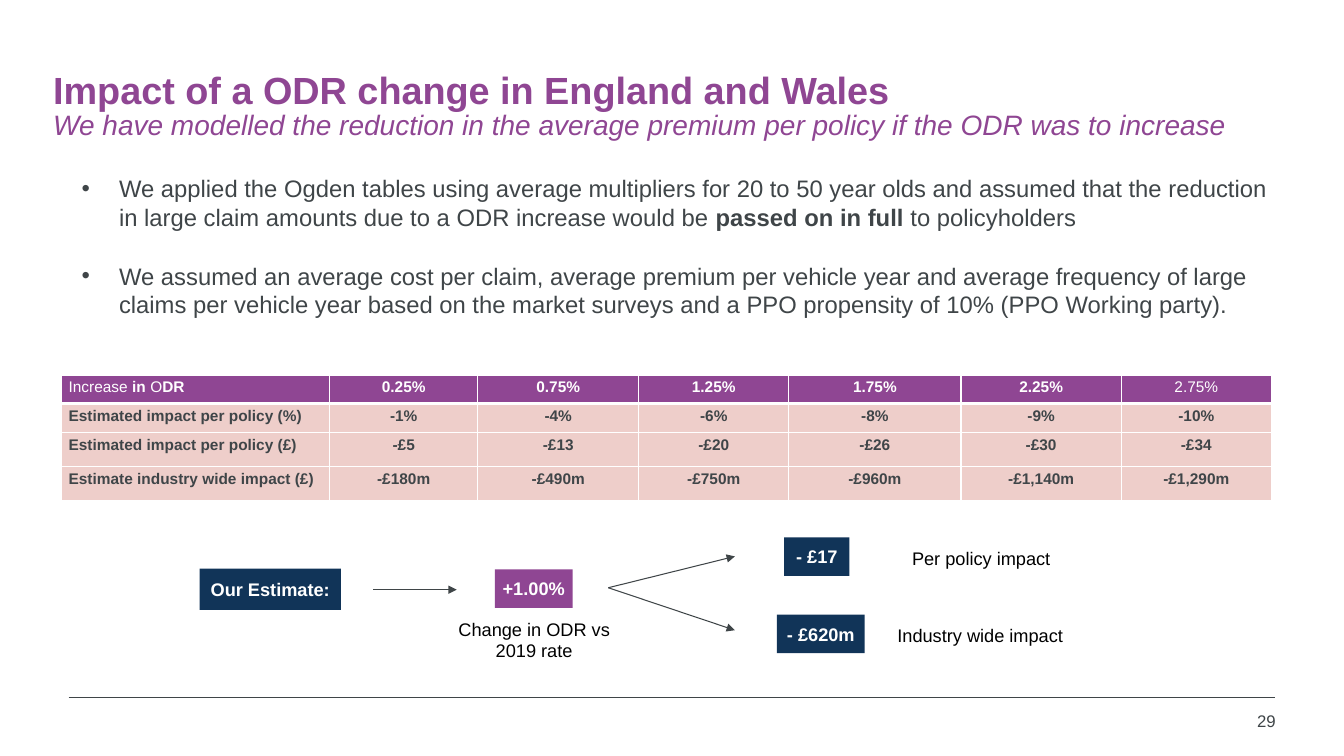
"""Build the slide on the impact of an ODR change in England and Wales."""
from lxml.etree import SubElement
from pptx import Presentation
from pptx.dml.color import RGBColor
from pptx.enum.shapes import MSO_CONNECTOR, MSO_SHAPE
from pptx.enum.text import MSO_ANCHOR, PP_ALIGN
from pptx.oxml import parse_xml
from pptx.oxml.ns import nsdecls, qn
from pptx.util import Cm, Pt

COLORS = {"purple": "8F4693", "navy": "113458", "ink": "3F4548",
          "pink": "EECECA", "white": "FFFFFF", "black": "000000"}


def add_runs(paragraph, runs, size, color, align=PP_ALIGN.LEFT):
    """Add (text, bold, italic) runs to a paragraph."""
    paragraph.alignment = align
    for text, bold, italic in runs:
        run = paragraph.add_run()
        run.text = text
        run.font.name = "Arial"
        run.font.size = Pt(size)
        run.font.bold = bold
        run.font.italic = italic
        run.font.color.rgb = RGBColor.from_string(COLORS[color])


def add_frame(left, top, width, height, inset_x=0, inset_y=0, anchor=MSO_ANCHOR.TOP):
    """Add a wrapping text box and return its text frame."""
    frame = slide.shapes.add_textbox(Cm(left), Cm(top), Cm(width), Cm(height)).text_frame
    frame.word_wrap = True
    frame.margin_left = frame.margin_right = Cm(inset_x)
    frame.margin_top = frame.margin_bottom = Cm(inset_y)
    frame.vertical_anchor = anchor
    return frame


deck = Presentation()
deck.slide_width, deck.slide_height = Cm(33.87), Cm(19.05)
slide = deck.slides.add_slide(deck.slide_layouts[6])

heading = add_frame(1.09, 1.12, 31.75, 3.17, 0.25, 0.13, MSO_ANCHOR.MIDDLE)
title, subtitle = heading.paragraphs[0], heading.add_paragraph()
title.line_spacing = subtitle.line_spacing = 0.85
add_runs(title, [("Impact of a ODR change in England and Wales", True, False)], 27, "purple")
add_runs(subtitle, [("We have modelled the reduction in the average premium per policy "
                     "if the ODR was to increase", False, True)], 20, "purple")

assumptions = [
    [("We applied the Ogden tables using average multipliers for 20 to 50 year olds and "
      "assumed that the reduction in large claim amounts due to a ODR increase would be ",
      False, False),
     ("passed on in full", True, False),
     (" to policyholders", False, False)],
    [("We assumed an average cost per claim, average premium per vehicle year and average "
      "frequency of large claims per vehicle year based on the market surveys and a PPO "
      "propensity of 10% (PPO Working party).", False, False)],
]
body = add_frame(1.73, 4.39, 30.48, 4.17)
for index, runs in enumerate(assumptions):
    bullet = body.add_paragraph() if index else body.paragraphs[0]
    properties = bullet._p.get_or_add_pPr()
    properties.set("marL", str(Cm(1.27)))
    properties.set("indent", str(Cm(-0.94)))
    bullet_color = SubElement(properties, qn("a:buClr"))
    SubElement(bullet_color, qn("a:srgbClr"), val=COLORS["ink"])
    SubElement(properties, qn("a:buFont"), typeface="Arial")
    SubElement(properties, qn("a:buChar"), char="•")
    if index:
        bullet.space_before = Pt(21.5)
    add_runs(bullet, runs, 17, "ink")

impact_rows = [
    ["Increase in ODR", "0.25%", "0.75%", "1.25%", "1.75%", "2.25%", "2.75%"],
    ["Estimated impact per policy (%)", "-1%", "-4%", "-6%", "-8%", "-9%", "-10%"],
    ["Estimated impact per policy (£)", "-£5", "-£13", "-£20", "-£26", "-£30", "-£34"],
    ["Estimate industry wide impact (£)", "-£180m", "-£490m", "-£750m", "-£960m",
     "-£1,140m", "-£1,290m"],
]
header_runs = {
    "Increase in ODR": [("Increase", False, False), (" in ", True, False),
                        ("O", False, False), ("DR", True, False)],
    "2.75%": [("2.75%", False, False)],
}
column_widths = [6.76, 3.73, 4.06, 3.78, 4.34, 4.04, 3.78]
row_heights = [0.72, 0.72, 0.86, 0.86]
impact = slide.shapes.add_table(len(row_heights), len(column_widths), Cm(1.55), Cm(9.45),
                                Cm(sum(column_widths)), Cm(sum(row_heights))).table
impact.horz_banding = False
for column, width in zip(impact.columns, column_widths):
    column.width = Cm(width)
for r, (values, height) in enumerate(zip(impact_rows, row_heights)):
    impact.rows[r].height = Cm(height)
    for c, value in enumerate(values):
        cell = impact.cell(r, c)
        cell.margin_left = cell.margin_right = Cm(0.18)
        cell.margin_top = cell.margin_bottom = Cm(0.1)
        borders = {"lnL": 1, "lnR": 1, "lnT": 3 if r == 1 else 1, "lnB": 1 if r else 3}
        for side, weight in borders.items():
            cell._tc.get_or_add_tcPr().append(parse_xml(
                f'<a:{side} {nsdecls("a")} w="{Pt(weight)}"><a:solidFill>'
                f'<a:srgbClr val="{COLORS["white"]}"/></a:solidFill></a:{side}>'))
        cell.fill.solid()
        cell.fill.fore_color.rgb = RGBColor.from_string(COLORS["pink" if r else "purple"])
        add_runs(cell.text_frame.paragraphs[0],
                 header_runs.get(value, [(value, True, False)]), 11,
                 "ink" if r else "white", PP_ALIGN.CENTER if c else PP_ALIGN.LEFT)

estimate_boxes = [
    ("Our Estimate:", "navy", 5.03, 14.33, 3.56, 1.04),
    ("+1.00%", "purple", 12.47, 14.35, 1.96, 0.97),
    ("- £17", "navy", 19.76, 13.54, 1.65, 0.97),
    ("- £620m", "navy", 19.58, 15.49, 2.21, 0.97),
]
for text, color, left, top, width, height in estimate_boxes:
    box = slide.shapes.add_shape(MSO_SHAPE.RECTANGLE, Cm(left), Cm(top), Cm(width), Cm(height))
    box.shadow.inherit = False
    box.fill.solid()
    box.fill.fore_color.rgb = RGBColor.from_string(COLORS[color])
    box.line.fill.background()
    label = box.text_frame
    label.margin_left = label.margin_right = label.margin_top = label.margin_bottom = 0
    label.vertical_anchor = MSO_ANCHOR.MIDDLE
    add_runs(label.paragraphs[0], [(text, True, False)], 13, "white", PP_ALIGN.CENTER)

captions = [
    ("Change in ODR vs 2019 rate", 10.87, 15.32, 5.18, 1.52),
    ("Per policy impact", 21.79, 13.54, 5.87, 0.97),
    ("Industry wide impact", 21.97, 15.49, 5.46, 0.97),
]
for text, left, top, width, height in captions:
    caption = add_frame(left, top, width, height, 0.25, 0.25)
    add_runs(caption.paragraphs[0], [(text, False, False)], 13, "black", PP_ALIGN.CENTER)

flow_and_footer_lines = [
    (9.4, 14.86, 11.51, 14.86, True),
    (15.33, 14.81, 18.52, 14.02, True),
    (15.33, 14.81, 18.52, 15.88, True),
    (1.73, 17.58, 32.13, 17.58, False),
]
for x1, y1, x2, y2, has_arrow in flow_and_footer_lines:
    stroke = slide.shapes.add_connector(MSO_CONNECTOR.STRAIGHT, Cm(x1), Cm(y1), Cm(x2), Cm(y2))
    stroke.line.color.rgb = RGBColor.from_string(COLORS["ink"])
    stroke.line.width = Pt(0.75)
    if has_arrow:
        SubElement(stroke.line._get_or_add_ln(), qn("a:tailEnd"), type="triangle")
    SubElement(stroke._element.spPr, qn("a:effectLst"))

page_number = add_frame(22.68, 18.03, 9.47, 0.38, anchor=MSO_ANCHOR.BOTTOM)
add_runs(page_number.paragraphs[0], [("29", False, False)], 12, "ink", PP_ALIGN.RIGHT)

deck.save("out.pptx")
